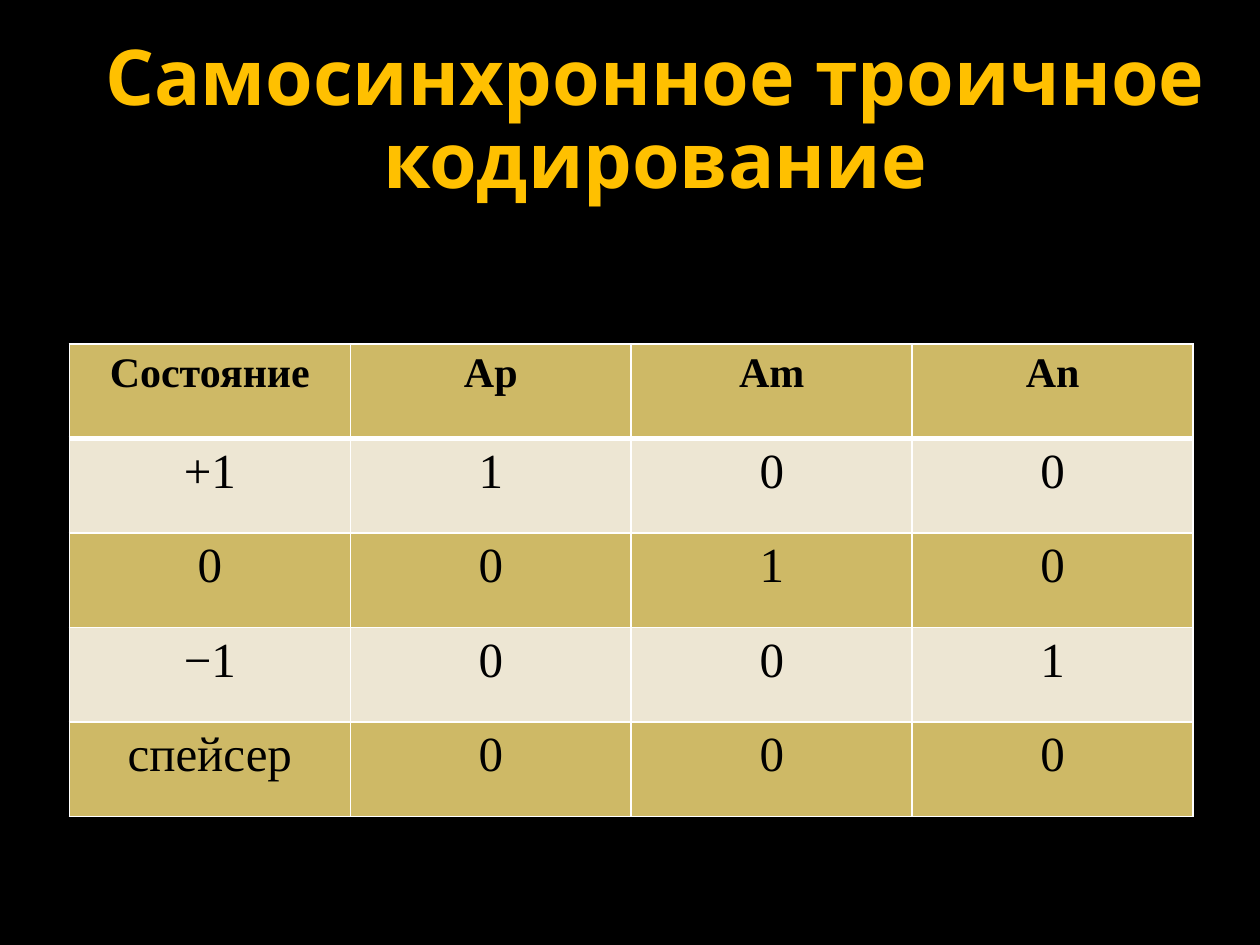
from pptx import Presentation
from pptx.dml.color import RGBColor
from pptx.enum.text import MSO_ANCHOR, PP_ALIGN
from pptx.oxml import parse_xml
from pptx.oxml.ns import nsdecls
from pptx.util import Inches, Pt

CENTER = PP_ALIGN.CENTER
MIDDLE = MSO_ANCHOR.MIDDLE

BLACK = RGBColor(0x00, 0x00, 0x00)
WHITE = RGBColor(0xFF, 0xFF, 0xFF)
AMBER = RGBColor(0xFF, 0xC0, 0x00)
GOLD = RGBColor(0xCE, 0xB9, 0x66)
CREAM = RGBColor(0xED, 0xE6, 0xD3)

TITLE_FONT = "Noto Sans"
TABLE_FONT = "Times New Roman"

CODE_ROWS = [
    ["Состояние", "Ap", "Am", "An"],
    ["+1", "1", "0", "0"],
    ["0", "0", "1", "0"],
    ["−1", "0", "0", "1"],
    ["спейсер", "0", "0", "0"],
]


def add_text(p, text, font, size, color, bold):
    p.alignment = CENTER
    r = p.add_run()
    r.text = text
    r.font.name = font
    r.font.size = Pt(size)
    r.font.bold = bold
    r.font.color.rgb = color


def add_title(slide, text):
    box = slide.shapes.add_textbox(
        Inches(0.67), Inches(0.25), Inches(9.06), Inches(1.39))
    tf = box.text_frame
    tf.word_wrap = True
    tf.vertical_anchor = MIDDLE
    tf.margin_bottom = 0
    p = tf.paragraphs[0]
    p.line_spacing = 0.9
    add_text(p, text, TITLE_FONT, 44, AMBER, True)


def set_borders(cell, top, bottom):
    """Draw white borders; top and bottom are widths in points."""
    tc_pr = cell._tc.get_or_add_tcPr()
    widths = {"lnL": 1, "lnR": 1, "lnT": top, "lnB": bottom}
    for i, (side, width) in enumerate(widths.items()):
        tc_pr.insert(i, parse_xml(
            f'<a:{side} {nsdecls("a")} w="{Pt(width)}"><a:solidFill>'
            f'<a:srgbClr val="{WHITE}"/></a:solidFill></a:{side}>'))


def add_code_table(slide, rows):
    table = slide.shapes.add_table(
        len(rows), len(rows[0]),
        Inches(0.55), Inches(2.73), Inches(8.92), Inches(3.75)).table
    for i, values in enumerate(rows):
        header = i == 0
        for j, value in enumerate(values):
            cell = table.cell(i, j)
            cell.fill.solid()
            cell.fill.fore_color.rgb = CREAM if i % 2 else GOLD
            set_borders(cell, 3 if i == 1 else 1, 3 if header else 1)
            add_text(cell.text_frame.paragraphs[0], value, TABLE_FONT,
                     24 if header else 28, BLACK, header)


def main():
    prs = Presentation()
    prs.slide_width = Inches(10)
    prs.slide_height = Inches(7.5)
    s = prs.slides.add_slide(prs.slide_layouts[6])

    # Background
    s.background.fill.solid()
    s.background.fill.fore_color.rgb = BLACK

    # Title and table of code states
    add_title(s, "Самосинхронное троичное кодирование")
    add_code_table(s, CODE_ROWS)

    prs.save("out.pptx")


if __name__ == "__main__":
    main()
